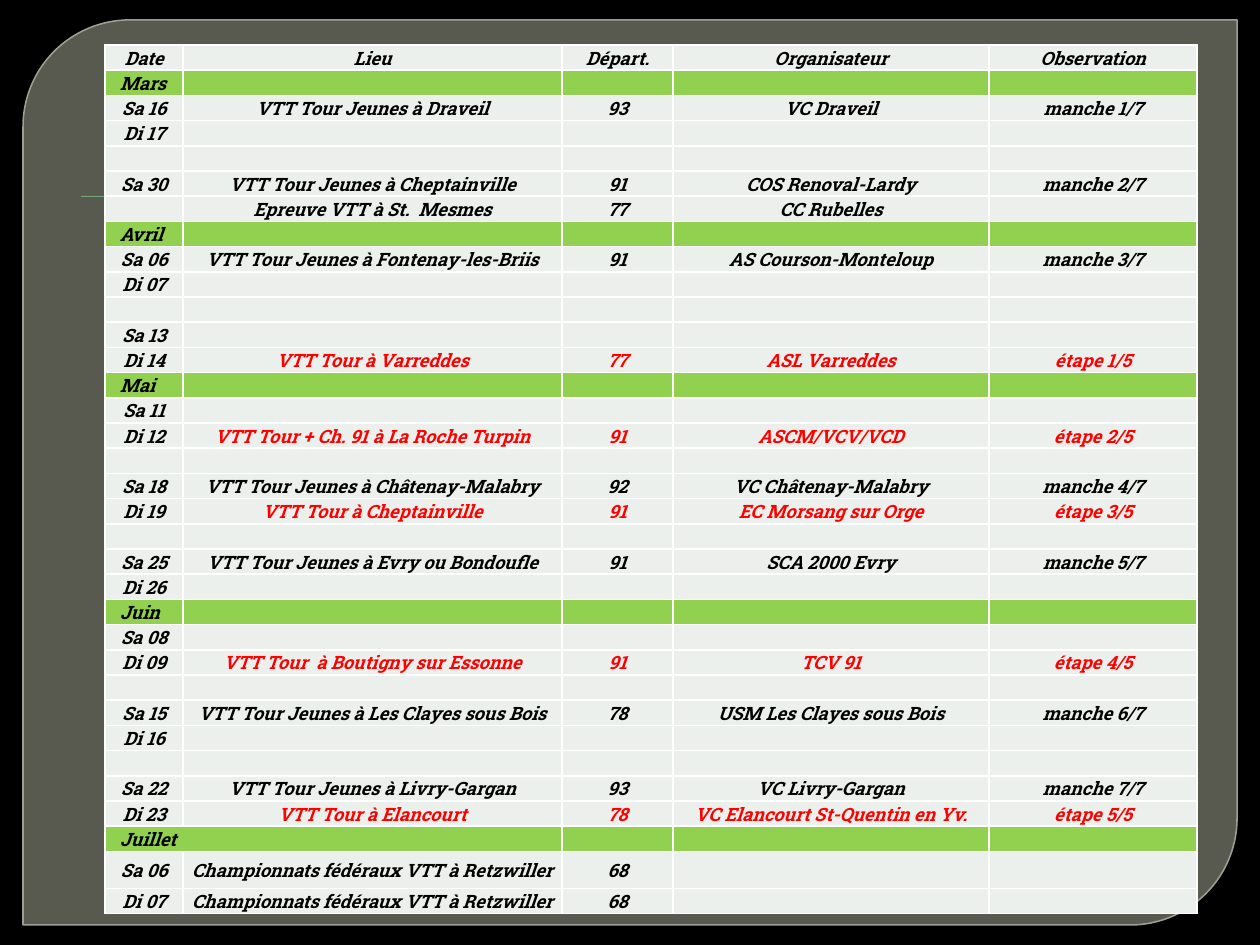
from lxml.etree import SubElement
from pptx import Presentation
from pptx.dml.color import RGBColor
from pptx.enum.shapes import MSO_SHAPE as SHAPE
from pptx.enum.text import MSO_ANCHOR as ANCHOR, PP_ALIGN as ALIGN
from pptx.oxml import parse_xml
from pptx.oxml.ns import nsdecls, qn
from pptx.util import Emu, Pt

COLORS = {
    "background": "000000", "panel": "888B7B", "panel_line": "9DA090",
    "rule": "72A376", "cell": "EBF0EC", "month": "92D050",
    "border": "FFFFFF", "text": "000000", "stage": "FF0000",
}
FONT = {"name": "Roboto Slab", "size": Pt(10.5), "bold": True, "italic": True}

HEADER = ("Date", "Lieu", "Départ.", "Organisateur", "Observation")
COLUMNS = (78, 379, 111, 316, 208)
ROW, TALL_ROW = 23, 37
BLANK = ("",)

# Month name and its rows: date, place, department, organiser, remark
CALENDAR = {
    "Mars": [
        ("Sa 16", "VTT Tour Jeunes à Draveil", "93", "VC Draveil", "manche 1/7"),
        ("Di 17",),
        BLANK,
        ("Sa 30", "VTT Tour Jeunes à Cheptainville", "91", "COS Renoval-Lardy", "manche 2/7"),
        ("", "Epreuve VTT à St.  Mesmes", "77", "CC Rubelles"),
    ],
    "Avril": [
        ("Sa 06", "VTT Tour Jeunes à Fontenay-les-Briis", "91", "AS Courson-Monteloup", "manche 3/7"),
        ("Di 07",),
        BLANK,
        ("Sa 13",),
        ("Di 14", "VTT Tour à Varreddes", "77", "ASL Varreddes", "étape 1/5"),
    ],
    "Mai": [
        ("Sa 11",),
        ("Di 12", "VTT Tour + Ch. 91 à La Roche Turpin", "91", "ASCM/VCV/VCD", "étape 2/5"),
        BLANK,
        ("Sa 18", "VTT Tour Jeunes à Châtenay-Malabry", "92", "VC Châtenay-Malabry", "manche 4/7"),
        ("Di 19", "VTT Tour à Cheptainville", "91", "EC Morsang sur Orge", "étape 3/5"),
        BLANK,
        ("Sa 25", "VTT Tour Jeunes à Evry ou Bondoufle", "91", "SCA 2000 Evry", "manche 5/7"),
        ("Di 26",),
    ],
    "Juin": [
        ("Sa 08",),
        ("Di 09", "VTT Tour  à Boutigny sur Essonne", "91", "TCV 91", "étape 4/5"),
        BLANK,
        ("Sa 15", "VTT Tour Jeunes à Les Clayes sous Bois", "78", "USM Les Clayes sous Bois", "manche 6/7"),
        ("Di 16",),
        BLANK,
        ("Sa 22", "VTT Tour Jeunes à Livry-Gargan", "93", "VC Livry-Gargan", "manche 7/7"),
        ("Di 23", "VTT Tour à Elancourt", "78", "VC Elancourt St-Quentin en Yv.", "étape 5/5"),
    ],
    "Juillet": [
        ("Sa 06", "Championnats fédéraux VTT à Retzwiller", "68"),
        ("Di 07", "Championnats fédéraux VTT à Retzwiller", "68"),
    ],
}


def px(value):
    return Emu(round(value * 914400 / 126))


def rgb(name):
    return RGBColor.from_string(COLORS[name])


class SlideBuilder:
    def __init__(self, prs):
        self.s = prs.slides.add_slide(prs.slide_layouts[6])
        fill = self.s.background.fill
        fill.solid()
        fill.fore_color.rgb = rgb("background")

    def shape(self, kind, x, y, w, h, color, line=None, alpha=None):
        sp = self.s.shapes.add_shape(kind, px(x), px(y), px(w), px(h))
        sp.shadow.inherit = False
        sp.fill.solid()
        sp.fill.fore_color.rgb = rgb(color)
        if line:
            sp.line.color.rgb = rgb(line)
            sp.line.width = Pt(0.87)
        else:
            sp.line.fill.background()
        if alpha:
            clr = sp._element.spPr.find(qn("a:solidFill"))[0]
            SubElement(clr, qn("a:alpha"), val=str(alpha * 1000))
        return sp

    def table(self, x, y, columns, heights):
        frame = self.s.shapes.add_table(len(heights), len(columns), px(x), px(y),
                                        px(sum(columns)), px(sum(heights)))
        table = frame.table
        table.first_row = table.horz_banding = False
        for column, width in zip(table.columns, columns):
            column.width = px(width)
        for row, height in zip(table.rows, heights):
            row.height = px(height)
        return table

    def cell(self, cell, text, fill, color="text", align=ALIGN.CENTER, indent=1):
        cell.fill.solid()
        cell.fill.fore_color.rgb = rgb(fill)
        layout = {"vertical_anchor": ANCHOR.MIDDLE, "margin_left": px(indent),
                  "margin_right": px(1), "margin_top": px(1), "margin_bottom": 0}
        for name, value in layout.items():
            setattr(cell, name, value)
        self.borders(cell)
        p = cell.text_frame.paragraphs[0]
        p.alignment = align
        if text:
            r = p.add_run()
            r.text = text
            for name, value in FONT.items():
                setattr(r.font, name, value)
            r.font.color.rgb = rgb(color)
        else:
            # An empty cell keeps the height of a text line
            end = SubElement(p._p, qn("a:endParaRPr"), sz="1050", b="1", i="1")
            SubElement(end, qn("a:latin"), typeface=FONT["name"])

    def borders(self, cell):
        tcPr = cell._tc.get_or_add_tcPr()
        for i, side in enumerate(("lnL", "lnR", "lnT", "lnB")):
            tcPr.insert(i, parse_xml(
                f'<a:{side} {nsdecls("a")} w="12700"><a:solidFill>'
                f'<a:srgbClr val="{COLORS["border"]}"/></a:solidFill></a:{side}>'))


def main():
    prs = Presentation()
    prs.slide_width, prs.slide_height = px(1260), px(945)
    slide = SlideBuilder(prs)

    # Panel and thin rule behind the table
    panel = slide.shape(SHAPE.ROUND_2_DIAG_RECTANGLE, 23, 20, 1214, 905,
                        "panel", "panel_line", alpha=65)
    panel.adjustments[0], panel.adjustments[1] = 0.118, 0
    slide.shape(SHAPE.RECTANGLE, 81, 196, 1102, 1, "rule")

    # Calendar rows in order
    rows = [HEADER]
    for month, events in CALENDAR.items():
        rows += [(month,), *events]
    heights = [ROW] * len(rows)
    heights[-2] = TALL_ROW

    # Calendar table
    table = slide.table(105, 45, COLUMNS, heights)
    for i, row in enumerate(rows):
        is_month = row[0] in CALENDAR
        is_stage = row[-1].startswith("étape")
        for j in range(len(COLUMNS)):
            text = row[j] if j < len(row) else ""
            style = {"fill": "month" if is_month else "cell",
                     "color": "stage" if is_stage and j else "text"}
            if is_month and j == 0:
                style.update(align=ALIGN.LEFT, indent=15)
            slide.cell(table.cell(i, j), text, **style)
        if row[0] == "Juillet":
            table.cell(i, 0).merge(table.cell(i, 1))

    prs.save("out.pptx")


if __name__ == "__main__":
    main()
